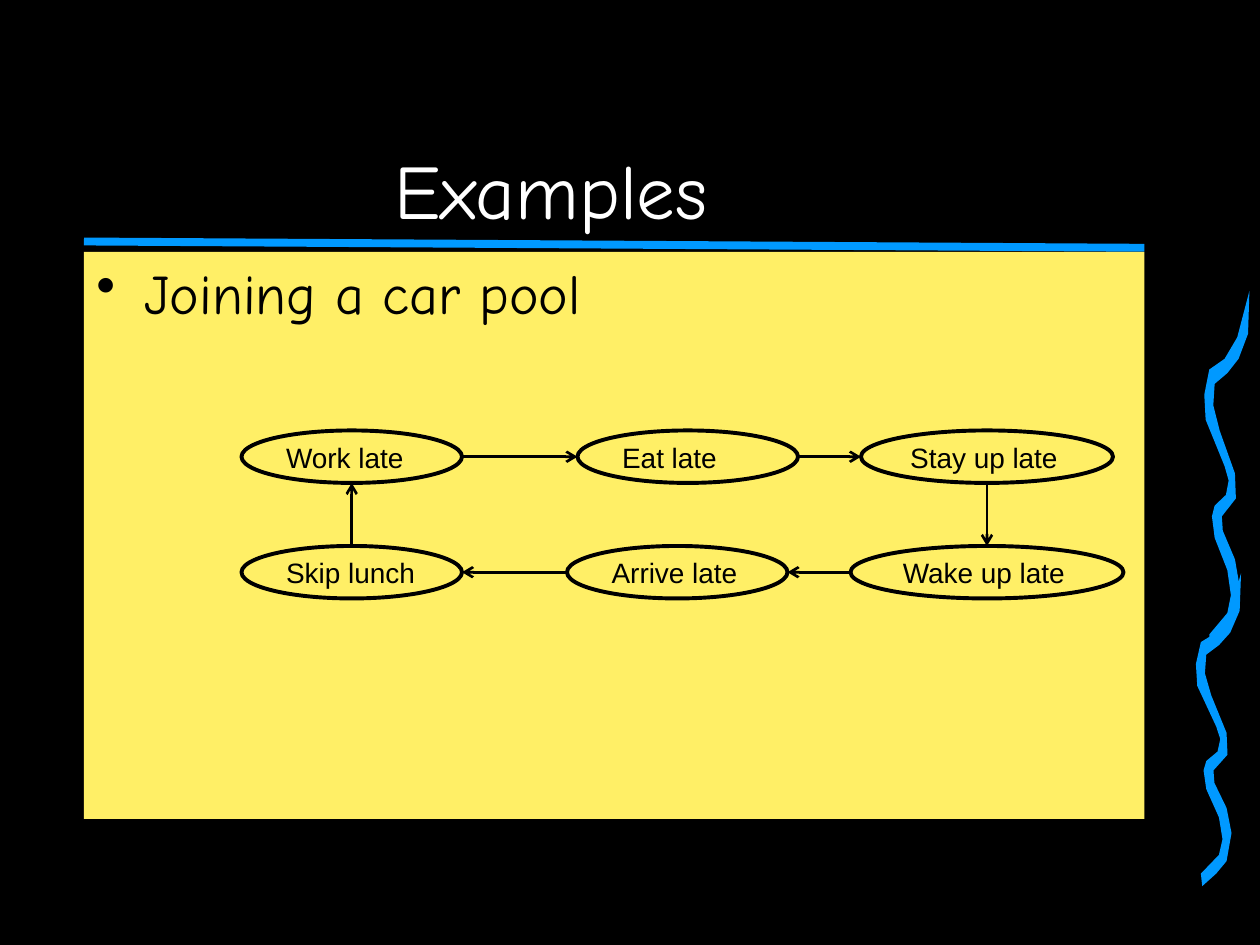
from itertools import pairwise

from lxml.etree import SubElement
from pptx import Presentation
from pptx.dml.color import RGBColor
from pptx.enum.shapes import MSO_CONNECTOR, MSO_SHAPE
from pptx.enum.text import MSO_ANCHOR, PP_ALIGN
from pptx.oxml.ns import qn
from pptx.util import Inches, Pt

BLACK = RGBColor(0, 0, 0)
WHITE = RGBColor(255, 255, 255)
BLUE = RGBColor(0, 0x99, 0xFF)
YELLOW = RGBColor(0xFF, 0xEF, 0x66)
UNIT = Inches(1) / 12

WAVE = [
    (11, 96), (51, 90), (59, 85), (51, 78), (23, 69), (17, 63), (23, 60),
    (48, 57), (54, 53), (45, 49), (3, 36), (0, 29), (11, 22), (45, 19),
    (73, 13), (100, 0), (97, 12), (76, 19), (51, 23), (23, 26), (20, 32),
    (34, 39), (68, 51), (70, 58), (39, 63), (41, 67), (68, 75), (79, 83),
    (68, 92), (45, 96), (14, 100),
]
CYCLE = [
    ("Work late", 23, 41, 21),
    ("Eat late", 55, 41, 21),
    ("Stay up late", 82, 41, 24),
    ("Wake up late", 81, 52, 26),
    ("Arrive late", 54, 52, 21),
    ("Skip lunch", 23, 52, 21),
]


def grid(*cells):
    """Turn grid cells into lengths."""
    return [round(cell * UNIT) for cell in cells]


def style(part, text, size, face, color):
    """Write one paragraph and set its font."""
    part.text = text
    font = part.font
    font.size, font.name, font.color.rgb = Pt(size), face, color


def line(slide, ends, color, width):
    """Draw a straight line between two grid points."""
    link = slide.shapes.add_connector(MSO_CONNECTOR.STRAIGHT, *grid(*ends))
    link.line.color.rgb, link.line.width = color, Pt(width)
    SubElement(link._element.spPr, qn("a:effectLst"))
    return link


def wave(slide, box):
    """Draw a wavy ribbon filling the box."""
    left, top, width, height = box
    spots = [grid(left + width * x / 100, top + height * y / 100) for x, y in WAVE]
    pen = slide.shapes.build_freeform(*spots[0])
    pen.add_line_segments(spots[1:])
    shape = pen.convert_to_shape()
    shape.shadow.inherit = False
    shape.fill.solid()
    shape.fill.fore_color.rgb = BLUE
    shape.line.fill.background()


def title(slide, box):
    """Place the title at the foot of the box, with a rule below."""
    frame = slide.shapes.add_textbox(*grid(*box)).text_frame
    frame.word_wrap, frame.vertical_anchor = True, MSO_ANCHOR.BOTTOM
    part = frame.paragraphs[0]
    part.alignment = PP_ALIGN.CENTER
    style(part, "Examples", 44, "Comic Neue", WHITE)
    left, top, width, height = box
    foot = top + height
    line(slide, (left, foot, left + width + 12, foot + 0.6), BLUE, 4.5)


def block(slide, kind, box):
    """Add a yellow shape with text starting at its top left."""
    shape = slide.shapes.add_shape(kind, *grid(*box))
    shape.shadow.inherit = False
    shape.fill.solid()
    shape.fill.fore_color.rgb = YELLOW
    shape.text_frame.vertical_anchor = MSO_ANCHOR.TOP
    part = shape.text_frame.paragraphs[0]
    part.alignment = PP_ALIGN.LEFT
    return shape, part


def panel(slide, box):
    """Place the body panel with its bullet."""
    shape, part = block(slide, MSO_SHAPE.RECTANGLE, box)
    shape.line.fill.background()
    props = part._p.get_or_add_pPr()
    inset = Inches(0.38)
    props.set("marL", str(inset))
    props.set("indent", str(-inset))
    SubElement(props, qn("a:buChar"), char="•")
    style(part, "Joining a car pool", 32, "Comic Neue", BLACK)


def oval(slide, text, box):
    """Place one step of the cycle."""
    shape, part = block(slide, MSO_SHAPE.OVAL, box)
    shape.line.color.rgb, shape.line.width = BLACK, Pt(2.25)
    part.line_spacing = 0.9
    style(part, text, 16, "Arial", BLACK)


def edge(box, other):
    """Find the point of a box that faces another box."""
    left, top, width, height = box
    if top == other[1]:
        return left + width * (left < other[0]), top + height / 2
    return left + width / 2, top + height * (top < other[1])


def cycle(slide, steps, height):
    """Place the steps and join them in a ring of arrows."""
    boxes = [(left, top, width, height) for _, left, top, width in steps]
    for step, box in zip(steps, boxes):
        oval(slide, step[0], box)
    for start, end in pairwise(boxes + boxes[:1]):
        ends = edge(start, end) + edge(end, start)
        link = line(slide, ends, BLACK, 1.5)
        stroke = link._element.spPr.find(qn("a:ln"))
        SubElement(stroke, qn("a:tailEnd"), type="arrow")


def main():
    """Build and save the slide."""
    deck = Presentation()
    deck.slide_width, deck.slide_height = Inches(10), Inches(7.5)
    slide = deck.slides.add_slide(deck.slide_layouts[6])
    slide.background.fill.solid()
    slide.background.fill.fore_color.rgb = BLACK
    wave(slide, (113.9, 54.6, 4.3, 29.8))
    wave(slide, (114.7, 27.7, 4.3, 34.1))
    title(slide, (8, 0, 89, 23))
    panel(slide, (8, 24, 101, 54))
    cycle(slide, CYCLE, 5)
    deck.save("out.pptx")


if __name__ == "__main__":
    main()
